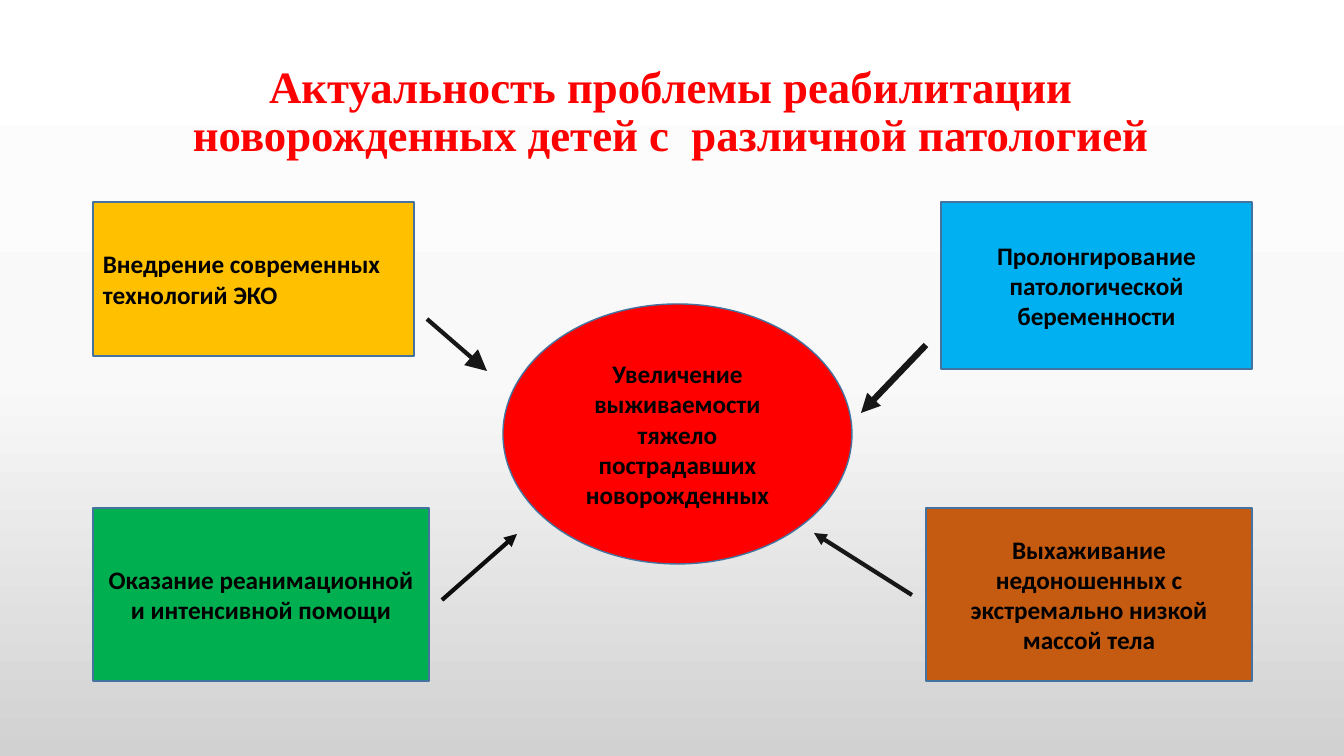
from copy import deepcopy
from lxml.etree import SubElement
from pptx import Presentation
from pptx.dml.color import RGBColor
from pptx.enum.shapes import MSO_CONNECTOR, MSO_SHAPE
from pptx.enum.text import MSO_ANCHOR, PP_ALIGN
from pptx.oxml.ns import qn
from pptx.util import Pt

SLIDE_SIZE = (1344, 756)
PX = 914400 / 100.8

BACKDROP = [(0, "FFFFFF"), (0.5, "F9F9F9"), (1, "D1D1D1")]
HEADING = "Актуальность проблемы реабилитации новорожденных детей с  различной патологией"
HEADING_AREA = (96, 40, 1150, 146)

OUTLINE = "43739E"
RECT, OVAL = MSO_SHAPE.RECTANGLE, MSO_SHAPE.OVAL
LEFT, CENTER = PP_ALIGN.LEFT, PP_ALIGN.CENTER
FACTORS = [
    ("Внедрение современных технологий ЭКО", RECT, (93, 202, 321, 154), "FFC000", LEFT),
    ("Увеличение выживаемости тяжело пострадавших новорожденных", OVAL, (503, 304, 349, 260), "FF0000", CENTER),
    ("Пролонгирование патологической беременности", RECT, (941, 202, 311, 167), "00B0F0", CENTER),
    ("Оказание реанимационной и интенсивной помощи", RECT, (93, 508, 336, 173), "00B050", CENTER),
    ("Выхаживание недоношенных с экстремально низкой массой тела", RECT, (926, 508, 326, 173), "C55A11", CENTER),
]
ARROWS = [
    ((427, 319), (487, 371), "181717", 3, "lg"),
    ((442, 600), (517, 534), "0D0D0D", 3, "med"),
    ((926, 345), (861, 413), "181717", 4.5, "med"),
    ((912, 595), (814, 533), "181717", 3, "med"),
]


def emu(lengths):
    return [round(length * PX) for length in lengths]


def color(hex_code):
    return RGBColor.from_string(hex_code)


def write(shape, wording, align, font_name, size, hex_code):
    frame = shape.text_frame
    frame.word_wrap = True
    frame.vertical_anchor = MSO_ANCHOR.MIDDLE
    paragraph = frame.paragraphs[0]
    paragraph.alignment = align
    run = paragraph.add_run()
    run.text = wording
    run.font.name = font_name
    run.font.size = Pt(size)
    run.font.bold = True
    run.font.color.rgb = color(hex_code)
    return paragraph


def paint_backdrop(slide):
    fill = slide.background.fill
    fill.gradient()
    fill.gradient_angle = 270
    stop_list = slide.element.find(".//" + qn("a:gsLst"))
    stop_list.append(deepcopy(stop_list[-1]))
    for stop, (position, hex_code) in zip(fill.gradient_stops, BACKDROP):
        stop.position = position
        stop.color.rgb = color(hex_code)


def add_factor(slide, wording, outline_kind, area, hex_code, align):
    factor = slide.shapes.add_shape(outline_kind, *emu(area))
    factor.shadow.inherit = False
    factor.fill.solid()
    factor.fill.fore_color.rgb = color(hex_code)
    factor.line.color.rgb = color(OUTLINE)
    factor.line.width = Pt(1)
    write(factor, wording, align, "Calibri", 18, "000000")


def add_arrow(slide, start, end, hex_code, width, head_size):
    arrow = slide.shapes.add_connector(MSO_CONNECTOR.STRAIGHT, *emu(start + end))
    arrow.line.color.rgb = color(hex_code)
    arrow.line.width = Pt(width)
    outline = arrow.element.spPr.find(qn("a:ln"))
    SubElement(outline, qn("a:tailEnd"), type="triangle", w=head_size, len=head_size)
    SubElement(arrow.element.spPr, qn("a:effectLst"))


def main():
    deck = Presentation()
    deck.slide_width, deck.slide_height = emu(SLIDE_SIZE)
    slide = deck.slides.add_slide(deck.slide_layouts[6])
    paint_backdrop(slide)
    heading = slide.shapes.add_textbox(*emu(HEADING_AREA))
    write(heading, HEADING, CENTER, "Times New Roman", 32, "FF0000").line_spacing = 0.9
    for factor in FACTORS:
        add_factor(slide, *factor)
    for arrow in ARROWS:
        add_arrow(slide, *arrow)
    deck.save("out.pptx")


if __name__ == "__main__":
    main()
